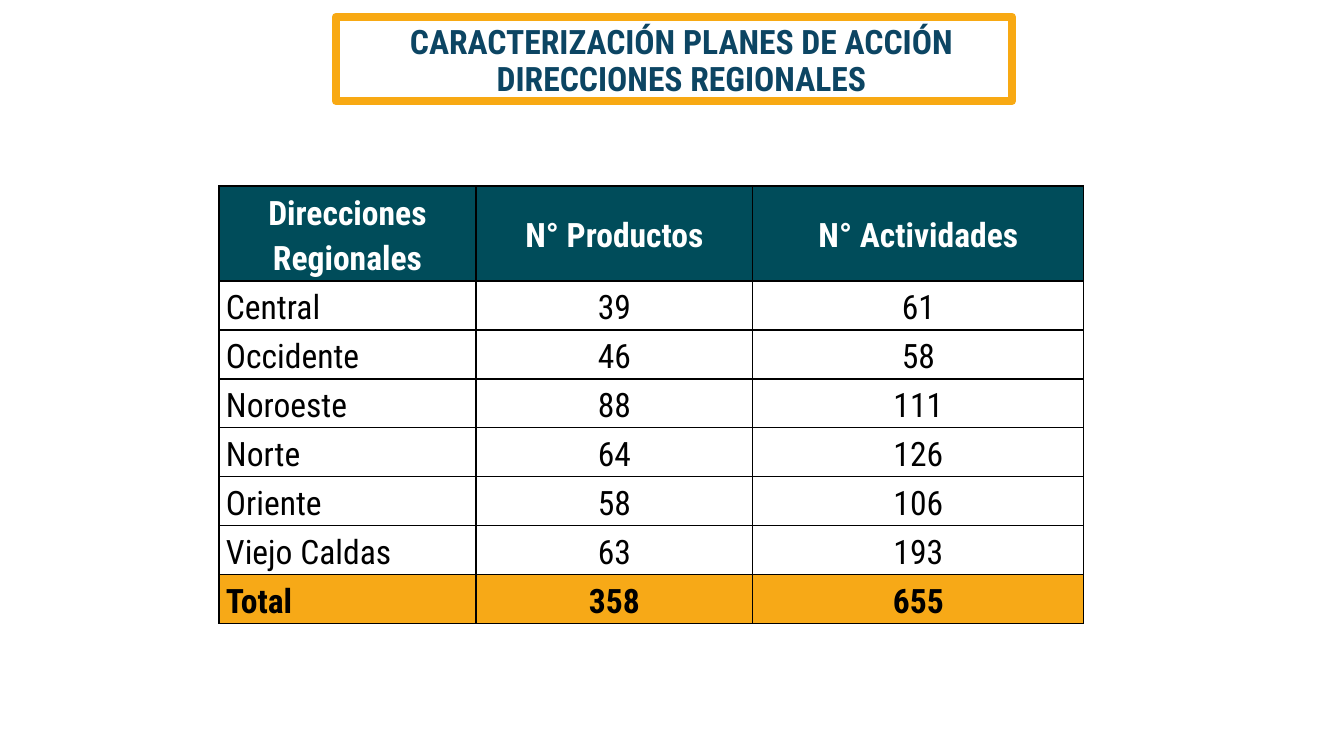
"""Build the slide that sums up the regional action plans."""
import pptx
import pptx.dml.color
import pptx.enum.shapes
import pptx.enum.text
import pptx.oxml
import pptx.oxml.ns
import pptx.util

PX = 914400 / 100.8
FONT = "Roboto Condensed"
ALIGN = pptx.enum.text.PP_ALIGN


def px(*sizes):
    return [pptx.util.Emu(round(size * PX)) for size in sizes]


def color(code):
    return pptx.dml.color.RGBColor.from_string(code)


deck = pptx.Presentation()
deck.slide_width, deck.slide_height = px(1344, 756)
slide = deck.slides.add_slide(deck.slide_layouts[6])

frame = slide.shapes.add_shape(pptx.enum.shapes.MSO_SHAPE.RECTANGLE, *px(336, 17, 676, 84))
frame.shadow.inherit = False
frame.fill.background()
frame.line.color.rgb = color("F8A913")
frame.line.width = pptx.util.Pt(6)

title = slide.shapes.add_textbox(*px(331, 21, 701, 55)).text_frame
title.word_wrap = True
line = title.paragraphs[0]
line.text = "CARACTERIZACIÓN PLANES DE ACCIÓN DIRECCIONES REGIONALES"
line.alignment = ALIGN.CENTER
line.line_spacing = 0.9
line.font.name = FONT
line.font.size = pptx.util.Pt(24)
line.font.bold = True
line.font.color.rgb = color("0C4563")

data = [
    ("Direcciones Regionales", "N° Productos", "N° Actividades"),
    ("Central", "39", "61"),
    ("Occidente", "46", "58"),
    ("Noroeste", "88", "111"),
    ("Norte", "64", "126"),
    ("Oriente", "58", "106"),
    ("Viejo Caldas", "63", "193"),
    ("Total", "358", "655"),
]
last = len(data) - 1
table = slide.shapes.add_table(len(data), 3, *px(219, 186, 865, 438)).table
table.first_row = False
table.horz_banding = False
for col, width in zip(table.columns, px(257, 277, 331)):
    col.width = width
for row, height in zip(table.rows, px(95, *[49] * last)):
    row.height = height

for r, texts in enumerate(data):
    for c, text in enumerate(texts):
        cell = table.cell(r, c)
        cell.text = text
        cell.vertical_anchor = pptx.enum.text.MSO_ANCHOR.MIDDLE
        cell.margin_left, cell.margin_right, cell.margin_top, cell.margin_bottom = px(7, 7, 0, 0)
        if r in (0, last):
            cell.fill.solid()
            cell.fill.fore_color.rgb = color("F7A917" if r else "004C5A")
        else:
            cell.fill.background()
        line = cell.text_frame.paragraphs[0]
        line.alignment = ALIGN.JUSTIFY if r and c == 0 else ALIGN.CENTER
        line.line_spacing = 1.15
        line.font.name = FONT
        line.font.size = pptx.util.Pt(24)
        line.font.bold = r in (0, last)
        line.font.color.rgb = color("000000" if r else "FFFFFF")
        props = cell._tc.get_or_add_tcPr()
        for spot, side in enumerate("LRTB"):
            edge = pptx.oxml.parse_xml(
                f'<a:ln{side} {pptx.oxml.ns.nsdecls("a")} w="12700"><a:solidFill>'
                f'<a:srgbClr val="000000"/></a:solidFill></a:ln{side}>')
            props.insert(spot, edge)

deck.save("out.pptx")
